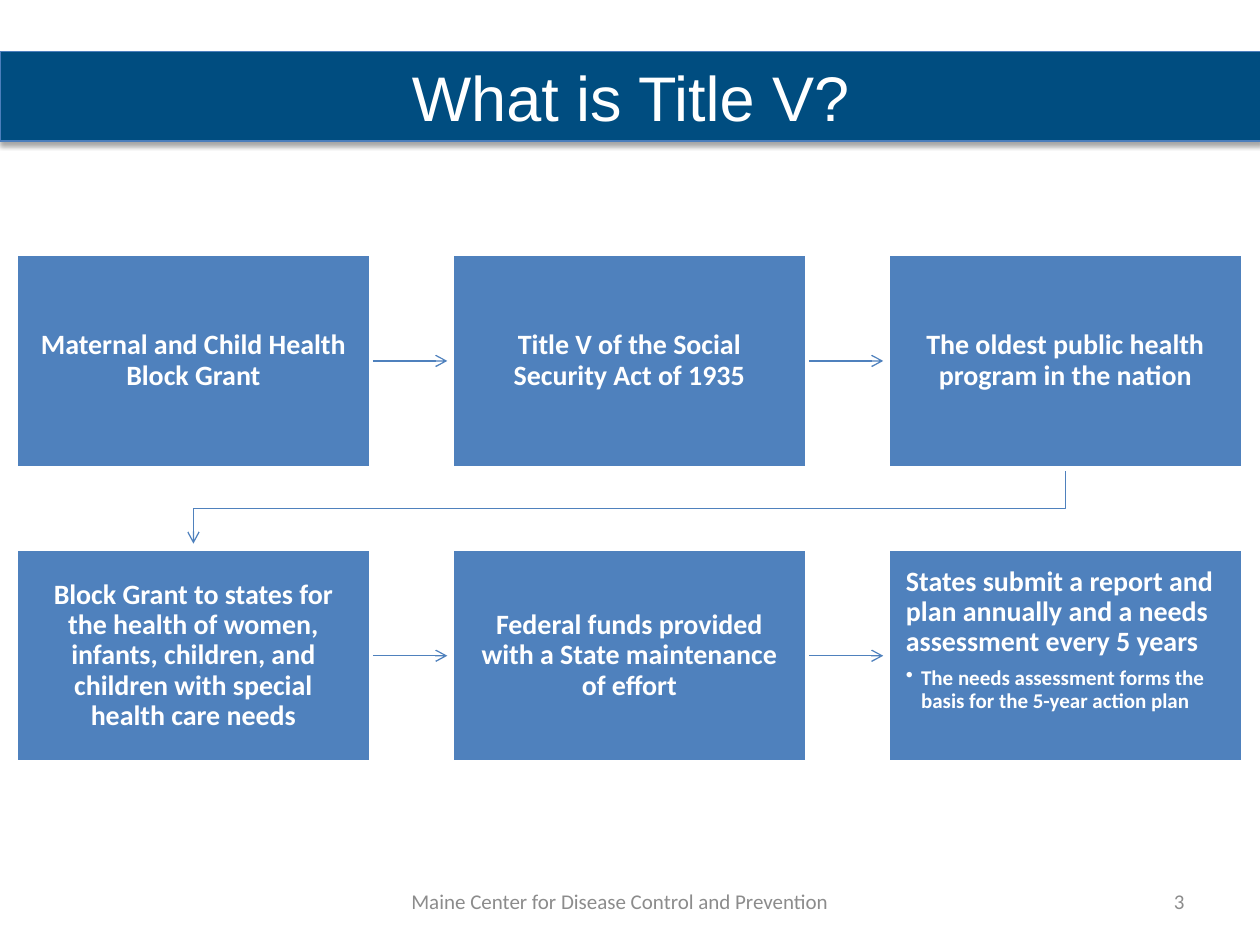
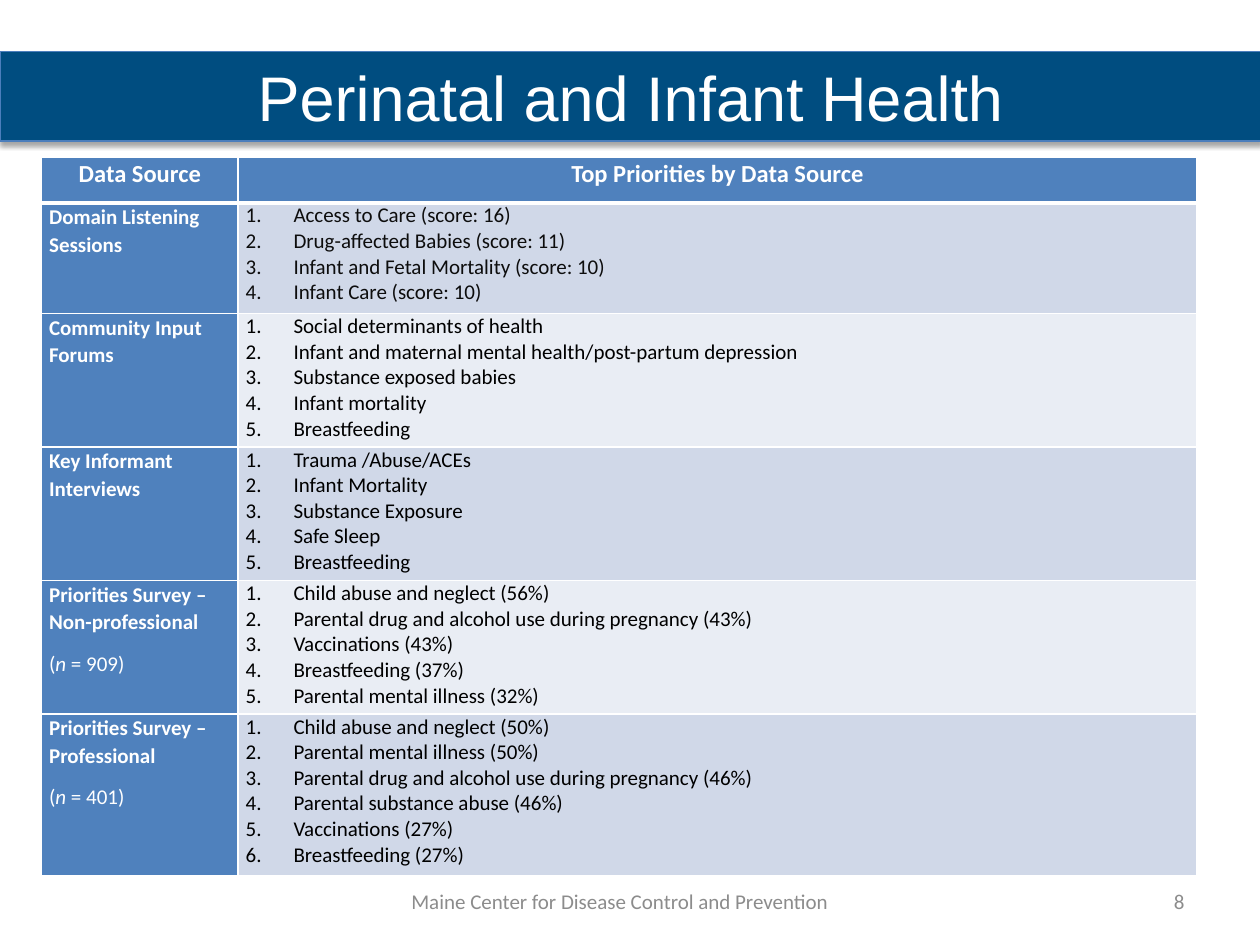
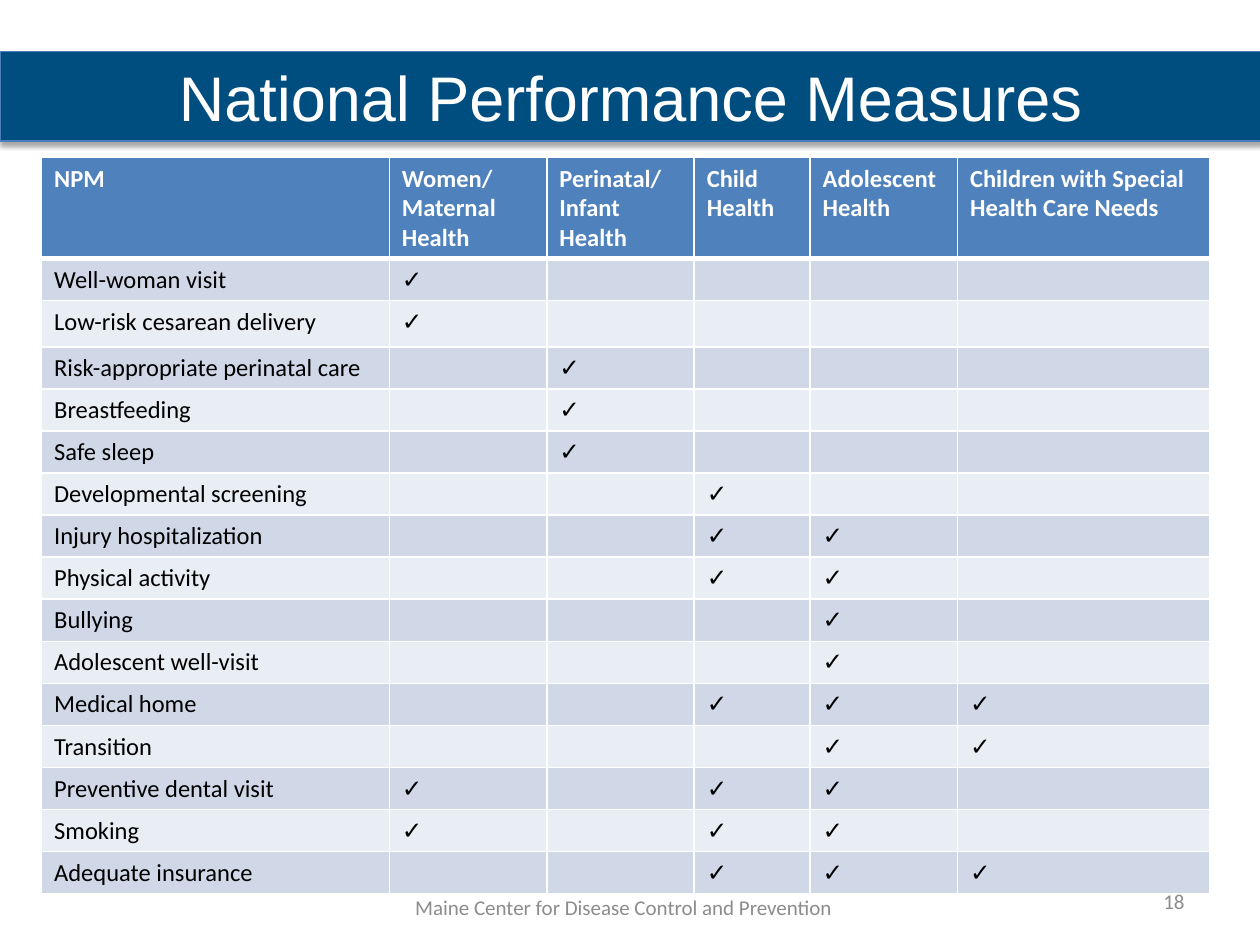
from dataclasses import dataclass
from typing import Optional

from lxml import etree
from pptx import Presentation
from pptx.dml.color import RGBColor
from pptx.enum.shapes import MSO_CONNECTOR, MSO_SHAPE
from pptx.enum.text import MSO_ANCHOR, PP_ALIGN
from pptx.oxml.ns import qn
from pptx.util import Emu, Inches, Pt

RECTANGLE = MSO_SHAPE.RECTANGLE
STRAIGHT = MSO_CONNECTOR.STRAIGHT
TOP, MIDDLE = MSO_ANCHOR.TOP, MSO_ANCHOR.MIDDLE
LEFT, CENTER, RIGHT = PP_ALIGN.LEFT, PP_ALIGN.CENTER, PP_ALIGN.RIGHT

WIDTH, HEIGHT = Inches(10), Inches(7.5)
NAVY, BLUE, EDGE = "004D80", "4F81BD", "4B7EBC"
WHITE, BLACK, INK, GRAY = "FFFFFF", "000000", "0D0D0D", "8C8C8C"
BANDING = ("E9EDF4", "D0D8E8")
BODY, HEADING = "Calibri", "Arial"
FOOTER = "Maine Center for Disease Control and Prevention"
CHECK = "✓"


@dataclass(frozen=True)
class Area:
    """Left, top, width and height as percentages of the slide."""
    left: float
    top: float
    width: float
    height: float

    def lengths(self) -> tuple:
        return across(self.left), down(self.top), across(self.width), down(self.height)


@dataclass(frozen=True)
class TextStyle:
    size: float
    color: str
    bold: bool = False
    align: int = LEFT
    face: str = BODY
    line: float = 1.0
    after: float = 0


@dataclass(frozen=True)
class Step:
    text: str
    detail: str = ""


@dataclass(frozen=True)
class Source:
    name: str
    priorities: tuple
    sample: Optional[int] = None
    color: str = BLACK


@dataclass(frozen=True)
class Measure:
    name: str
    domains: tuple


TITLE = TextStyle(36, WHITE, align=CENTER, face=HEADING)
FOOTER_STYLE = TextStyle(12, GRAY, align=CENTER)
NUMBER_STYLE = TextStyle(12, GRAY, align=RIGHT)
STEP_CENTERED = TextStyle(16, WHITE, True, CENTER, line=0.9)
STEP_LEFT = TextStyle(16, WHITE, True, line=0.9, after=5.6)
STEP_DETAIL = TextStyle(12, WHITE, True, line=0.9)
SOURCE_HEADER = TextStyle(14, WHITE, True, CENTER, line=1.07, after=3)
SOURCE_NAME = TextStyle(12, WHITE, True, line=1.07, after=8)
SAMPLE = TextStyle(12, WHITE, line=1.07, after=8)
MEASURE_HEADER = TextStyle(14, WHITE, True)
MEASURE_CELL = TextStyle(14, BLACK)

BAND = Area(0, 5.47, 100.1, 9.47)
NUMBER_AREA = Area(71.7, 92.67, 23.3, 5.33)
FOOTER_AREA = Area(29.2, 92.67, 40, 5.33)
LOW_FOOTER_AREA = Area(29.5, 93.33, 40, 5.33)
TABLE_LEFT, TABLE_TOP = 3.3, 16.67
FIRST_STEP = Area(1.3, 26.93, 28.1, 22.53)
STEP_PITCH_X, STEP_PITCH_Y = 34.6, 31.2
STEP_COLUMNS = 3
ARROW_GAP = 0.4

STEPS = (
    Step("Maternal and Child Health Block Grant"),
    Step("Title V of the Social Security Act of 1935"),
    Step("The oldest public health program in the nation"),
    Step("Block Grant to states for the health of women, infants, children, "
         "and children with special health care needs"),
    Step("Federal funds provided with a State maintenance of effort"),
    Step("States submit a report and plan annually and a needs assessment every 5 years",
         "The needs assessment forms the basis for the 5-year action plan"),
)

SOURCE_HEADERS = ("Data Source", "Top Priorities by Data Source")
SOURCE_COLUMNS = (15.6, 76.1)
SOURCE_ROWS = (4.8, 11.73, 14.13, 14.13, 14.13, 17.07)
SOURCES = (
    Source("Domain Listening Sessions", (
        "Access to Care (score: 16)", "Drug-affected Babies (score: 11)",
        "Infant and Fetal Mortality (score: 10)", "Infant Care (score: 10)"), color=INK),
    Source("Community Input Forums", (
        "Social determinants of health",
        "Infant and maternal mental health/post-partum depression",
        "Substance exposed babies", "Infant mortality", "Breastfeeding")),
    Source("Key Informant Interviews", (
        "Trauma /Abuse/ACEs", "Infant Mortality", "Substance Exposure",
        "Safe Sleep", "Breastfeeding")),
    Source("Priorities Survey – Non-professional", (
        "Child abuse and neglect (56%)",
        "Parental drug and alcohol use during pregnancy (43%)",
        "Vaccinations (43%)", "Breastfeeding (37%)",
        "Parental mental illness (32%)"), 909),
    Source("Priorities Survey –Professional", (
        "Child abuse and neglect (50%)", "Parental mental illness (50%)",
        "Parental drug and alcohol use during pregnancy (46%)",
        "Parental substance abuse (46%)", "Vaccinations (27%)",
        "Breastfeeding (27%)"), 401),
)

WOMEN, PERINATAL, CHILD, ADOLESCENT, SPECIAL = range(1, 6)
MEASURE_HEADERS = ("NPM", "Women/ Maternal Health", "Perinatal/ Infant Health",
                   "Child Health", "Adolescent Health",
                   "Children with Special Health Care Needs")
MEASURE_COLUMNS = (27.6, 12.5, 11.7, 9.2, 11.7, 20)
MEASURE_ROWS = (10.6, 4.45, 4.9) + (4.45,) * 13
MEASURES = (
    Measure("Well-woman visit", (WOMEN,)),
    Measure("Low-risk cesarean delivery", (WOMEN,)),
    Measure("Risk-appropriate perinatal care", (PERINATAL,)),
    Measure("Breastfeeding", (PERINATAL,)),
    Measure("Safe sleep", (PERINATAL,)),
    Measure("Developmental screening", (CHILD,)),
    Measure("Injury hospitalization", (CHILD, ADOLESCENT)),
    Measure("Physical activity", (CHILD, ADOLESCENT)),
    Measure("Bullying", (ADOLESCENT,)),
    Measure("Adolescent well-visit", (ADOLESCENT,)),
    Measure("Medical home", (CHILD, ADOLESCENT, SPECIAL)),
    Measure("Transition", (ADOLESCENT, SPECIAL)),
    Measure("Preventive dental visit", (WOMEN, CHILD, ADOLESCENT)),
    Measure("Smoking", (WOMEN, CHILD, ADOLESCENT)),
    Measure("Adequate insurance", (CHILD, ADOLESCENT, SPECIAL)),
)


def across(percent: float) -> Emu:
    return Emu(round(WIDTH * percent / 100))


def down(percent: float) -> Emu:
    return Emu(round(HEIGHT * percent / 100))


def rgb(color: str) -> RGBColor:
    return RGBColor.from_string(color)


def add_node(parent, tag: str, **attributes: str):
    return etree.SubElement(parent, qn(tag), attributes)


def style_paragraph(para, style: TextStyle) -> None:
    para.alignment = style.align
    para.line_spacing = style.line
    para.space_after = Pt(style.after)
    font = para.font
    font.name, font.size, font.bold = style.face, Pt(style.size), style.bold
    font.color.rgb = rgb(style.color)


def write(para, text: str, style: TextStyle) -> None:
    if text:
        para.add_run().text = text
    else:
        add_node(para._p, "a:endParaRPr", sz=str(style.size * 100))
    style_paragraph(para, style)


def add_marker(para, hang: float, tag: str, **attributes: str) -> None:
    properties = para._p.get_or_add_pPr()
    properties.set("marL", str(Inches(hang)))
    properties.set("indent", str(-Inches(hang)))
    add_node(properties, tag, **attributes)


def add_text(page, area: Area, text: str, style: TextStyle) -> None:
    frame = page.shapes.add_textbox(*area.lengths()).text_frame
    frame.word_wrap = True
    frame.vertical_anchor = MIDDLE
    write(frame.paragraphs[0], text, style)


def add_box(page, area: Area, fill: str, line: str, weight: float):
    box = page.shapes.add_shape(RECTANGLE, *area.lengths())
    box.shadow.inherit = False
    box.fill.solid()
    box.fill.fore_color.rgb = rgb(fill)
    box.line.color.rgb = rgb(line)
    box.line.width = Pt(weight)
    box.text_frame.word_wrap = True
    box.text_frame.vertical_anchor = MIDDLE
    return box


def add_page(deck, title: str, number: int, footer: Area = FOOTER_AREA):
    page = deck.slides.add_slide(deck.slide_layouts[6])
    band = add_box(page, BAND, NAVY, EDGE, 0.75)
    effects = band._element.spPr.find(qn("a:effectLst"))
    shadow = add_node(effects, "a:outerShdw", blurRad=str(Pt(3.1)), dist=str(Pt(1.8)),
                      dir="5400000", rotWithShape="0")
    add_node(add_node(shadow, "a:srgbClr", val=BLACK), "a:alpha", val="35000")
    write(band.text_frame.paragraphs[0], title, TITLE)
    add_text(page, NUMBER_AREA, str(number), NUMBER_STYLE)
    add_text(page, footer, FOOTER, FOOTER_STYLE)
    return page


def step_area(index: int) -> Area:
    row, column = divmod(index, STEP_COLUMNS)
    return Area(FIRST_STEP.left + column * STEP_PITCH_X,
                FIRST_STEP.top + row * STEP_PITCH_Y,
                FIRST_STEP.width, FIRST_STEP.height)


def finish_arrow(arrow) -> None:
    arrow.line.color.rgb = rgb(BLUE)
    arrow.line.width = Pt(0.75)
    add_node(arrow.line._get_or_add_ln(), "a:tailEnd", type="arrow")


def add_step_arrow(page, start: Area, end: Area) -> None:
    if start.top == end.top:
        level = down(start.top + start.height / 2)
        arrow = page.shapes.add_connector(
            STRAIGHT, across(start.left + start.width + ARROW_GAP / 2), level,
            across(end.left - ARROW_GAP), level)
        add_node(arrow._element.spPr, "a:effectLst")
    else:
        first_x = across(start.left + start.width / 2)
        last_x = across(end.left + end.width / 2)
        bottom = start.top + start.height
        turn = down((bottom + end.top) / 2)
        outline = page.shapes.build_freeform(first_x, down(bottom + ARROW_GAP))
        outline.add_line_segments(
            [(first_x, turn), (last_x, turn), (last_x, down(end.top - ARROW_GAP * 1.5))],
            close=False)
        arrow = outline.convert_to_shape()
        arrow.shadow.inherit = False
        arrow.fill.background()
    finish_arrow(arrow)


def add_step(page, area: Area, step: Step) -> None:
    frame = add_box(page, area, BLUE, WHITE, 2).text_frame
    frame.margin_left = frame.margin_right = Inches(0.14)
    frame.margin_top = frame.margin_bottom = Inches(0.14)
    write(frame.paragraphs[0], step.text, STEP_LEFT if step.detail else STEP_CENTERED)
    if step.detail:
        frame.vertical_anchor = TOP
        para = frame.add_paragraph()
        add_marker(para, 0.12, "a:buChar", char="•")
        write(para, step.detail, STEP_DETAIL)


def paint_cell(cell, fill: str, row: int) -> None:
    properties = cell._tc.get_or_add_tcPr()
    weights = {"L": 1, "R": 1, "T": 3 if row == 1 else 1, "B": 3 if row == 0 else 1}
    for side, weight in weights.items():
        line = add_node(properties, f"a:ln{side}", w=str(Pt(weight)))
        add_node(add_node(line, "a:solidFill"), "a:srgbClr", val=WHITE)
    cell.fill.solid()
    cell.fill.fore_color.rgb = rgb(fill)


def add_grid(page, columns: tuple, rows: tuple, blue_names: bool):
    area = Area(TABLE_LEFT, TABLE_TOP, sum(columns), sum(rows))
    table = page.shapes.add_table(len(rows), len(columns), *area.lengths()).table
    for column, width in zip(table.columns, columns):
        column.width = across(width)
    for index, (row, height) in enumerate(zip(table.rows, rows)):
        row.height = down(height)
        for position, cell in enumerate(row.cells):
            is_blue = index == 0 or (blue_names and position == 0)
            paint_cell(cell, BLUE if is_blue else BANDING[index % 2], index)
    return table


def fill_source(name_cell, list_cell, source: Source) -> None:
    frame = name_cell.text_frame
    write(frame.paragraphs[0], source.name, SOURCE_NAME)
    if source.sample:
        para = frame.add_paragraph()
        for text, italic in (("(", False), ("n ", True), (f"= {source.sample})", False)):
            span = para.add_run()
            span.text = text
            span.font.italic = italic
        style_paragraph(para, SAMPLE)
    frame = list_cell.text_frame
    for index, priority in enumerate(source.priorities):
        para = frame.add_paragraph() if index else frame.paragraphs[0]
        add_marker(para, 0.38, "a:buAutoNum", type="arabicPeriod")
        write(para, priority, TextStyle(12, source.color))


def build_steps(deck) -> None:
    page = add_page(deck, "What is Title V?", 3)
    areas = [step_area(index) for index in range(len(STEPS))]
    for start, end in zip(areas, areas[1:]):
        add_step_arrow(page, start, end)
    for area, step in zip(areas, STEPS):
        add_step(page, area, step)


def build_sources(deck) -> None:
    page = add_page(deck, "Perinatal and Infant Health", 8)
    table = add_grid(page, SOURCE_COLUMNS, SOURCE_ROWS, True)
    for cell in table.iter_cells():
        cell.margin_left = cell.margin_right = Inches(0.06)
        cell.margin_top = cell.margin_bottom = 0
    for column, header in enumerate(SOURCE_HEADERS):
        write(table.cell(0, column).text_frame.paragraphs[0], header, SOURCE_HEADER)
    for row, source in enumerate(SOURCES, 1):
        fill_source(table.cell(row, 0), table.cell(row, 1), source)


def build_measures(deck) -> None:
    page = add_page(deck, "National Performance Measures", 18, LOW_FOOTER_AREA)
    table = add_grid(page, MEASURE_COLUMNS, MEASURE_ROWS, False)
    rows = [MEASURE_HEADERS]
    for measure in MEASURES:
        marks = [CHECK if domain in measure.domains else ""
                 for domain in range(WOMEN, SPECIAL + 1)]
        rows.append((measure.name, *marks))
    for row, texts in enumerate(rows):
        style = MEASURE_CELL if row else MEASURE_HEADER
        for column, text in enumerate(texts):
            write(table.cell(row, column).text_frame.paragraphs[0], text, style)


def main() -> None:
    deck = Presentation()
    deck.slide_width, deck.slide_height = WIDTH, HEIGHT
    build_steps(deck)
    build_sources(deck)
    build_measures(deck)
    deck.save("out.pptx")


if __name__ == "__main__":
    main()
